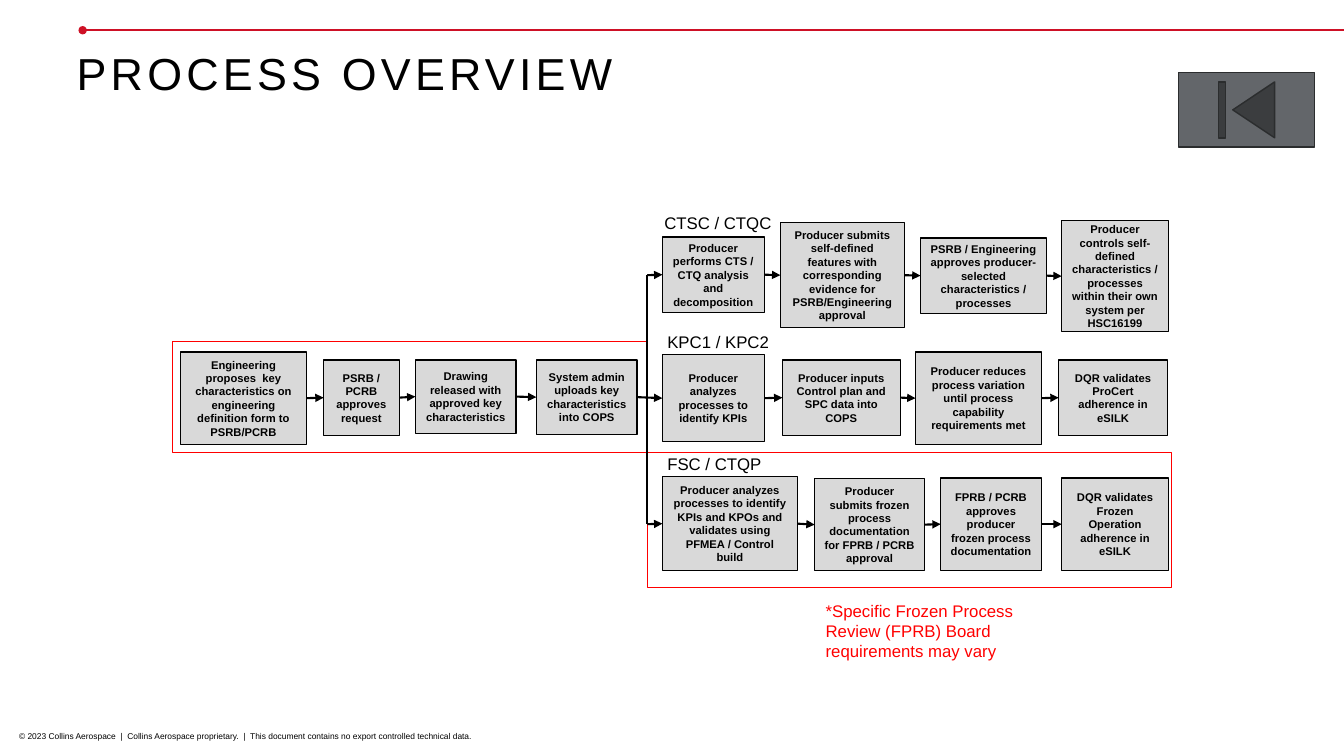
from lxml import etree
from pptx import Presentation
from pptx import util as u
from pptx.dml.color import RGBColor
from pptx.enum import shapes as shp, text as txt
from pptx.oxml.ns import qn


def paint(color_format, value):
    color_format.rgb = RGBColor.from_string(value)


def draw_line(start, end, color="000000", head=None, tail=None):
    line = slide.shapes.add_connector(
        shp.MSO_CONNECTOR.STRAIGHT, *[u.Inches(v) for v in (*start, *end)])
    paint(line.line.color, color)
    line.line.width = u.Pt(1.5)
    outline = line.line._get_or_add_ln()
    for tag, kind in (("a:headEnd", head), ("a:tailEnd", tail)):
        if kind:
            etree.SubElement(outline, qn(tag)).set("type", kind)
    etree.SubElement(line._element.spPr, qn("a:effectLst"))
    return line


prs = Presentation()
prs.slide_width, prs.slide_height = u.Inches(13.33), u.Inches(7.5)
slide = prs.slides.add_slide(prs.slide_layouts[5])

draw_line((0.82, 0.3), (13.33, 0.3), "CE1126", head="oval")

title = slide.shapes.title
title.left, title.top = u.Inches(0.76), u.Inches(0.56)
title.width, title.height = u.Inches(11.82), u.Inches(0.74)
frame = title.text_frame
frame.text = "PROCESS OVERVIEW"
frame.auto_size = txt.MSO_AUTO_SIZE.NONE
frame.vertical_anchor = txt.MSO_ANCHOR.TOP
frame.margin_left = frame.margin_right = frame.margin_top = frame.margin_bottom = 0
heading = frame.paragraphs[0]
heading.alignment = txt.PP_ALIGN.LEFT
heading.line_spacing = 0.8
heading.font.name, heading.font.size = "Arial", u.Pt(32)
paint(heading.font.color, "000000")
heading.runs[0].font._element.set("spc", "300")

for area in ((1.71, 3.39, 4.7, 1.1), (6.42, 4.49, 5.2, 1.34)):
    scope = slide.shapes.add_shape(shp.MSO_SHAPE.RECTANGLE, *[u.Inches(v) for v in area])
    scope.shadow.inherit = False
    scope.fill.background()
    paint(scope.line.color, "FF0000")
    scope.line.width = u.Pt(1)

flows = {
    "ctsc": [
        (6.57, 2.35, 1.01, 0.75, "Producer performs CTS / CTQ analysis and decomposition"),
        (7.74, 2.21, 1.23, 1.04, "Producer submits self-defined features with corresponding "
                                 "evidence for PSRB/Engineering approval"),
        (9.13, 2.36, 1.25, 0.75, "PSRB / Engineering approves producer-selected "
                                 "characteristics / processes"),
        (10.53, 2.19, 1.06, 1.1, "Producer controls self-defined characteristics / processes "
                                 "within their own system per HSC16199"),
    ],
    "kpc": [
        (1.79, 3.49, 1.25, 0.92, "Engineering proposes  key characteristics on engineering "
                                 "definition form to PSRB/PCRB"),
        (3.21, 3.57, 0.75, 0.75, "PSRB / PCRB approves request"),
        (4.12, 3.57, 1, 0.73, "Drawing released with approved key characteristics"),
        (5.32, 3.57, 1, 0.74, "System admin uploads key characteristics into COPS"),
        (6.57, 3.52, 1.01, 0.86, "Producer analyzes processes to identify KPIs"),
        (7.76, 3.57, 1.17, 0.75, "Producer inputs Control plan and SPC data into COPS"),
        (9.08, 3.49, 1.25, 0.92, "Producer reduces process variation until process "
                                 "capability requirements met"),
        (10.5, 3.57, 1.08, 0.75, "DQR validates ProCert adherence in eSILK"),
    ],
    "fsc": [
        (6.57, 4.73, 1.34, 0.93, "Producer analyzes processes to identify KPIs and KPOs and "
                                 "validates using PFMEA / Control build"),
        (8.08, 4.75, 1.09, 0.91, "Producer submits frozen process documentation for "
                                 "FPRB / PCRB approval"),
        (9.33, 4.74, 1, 0.92, "FPRB / PCRB approves producer frozen process documentation"),
        (10.53, 4.74, 1.06, 0.92, "DQR validates Frozen Operation adherence in eSILK"),
    ],
}
branch_x = 6.42
branch_y = {"ctsc": 2.73, "fsc": 5.2}
draw_line((branch_x, branch_y["ctsc"]), (branch_x, branch_y["fsc"]))

for flow, steps in flows.items():
    previous = None
    for x, y, width, height, wording in steps:
        step = slide.shapes.add_shape(
            shp.MSO_SHAPE.RECTANGLE, *[u.Inches(v) for v in (x, y, width, height)])
        step.shadow.inherit = False
        step.fill.solid()
        paint(step.fill.fore_color, "D9D9D9")
        paint(step.line.color, "000000")
        step.line.width = u.Pt(1)
        step.text_frame.text = wording
        step.text_frame.word_wrap = True
        step.text_frame.vertical_anchor = txt.MSO_ANCHOR.MIDDLE
        label = step.text_frame.paragraphs[0]
        label.alignment = txt.PP_ALIGN.CENTER
        label.font.name, label.font.size, label.font.bold = "Arial", u.Pt(8), True
        paint(label.font.color, "000000")

        if previous or flow in branch_y:
            level = y + height / 2
            start = (branch_x, branch_y.get(flow, level))
            arrow = draw_line(start, (x, level), tail="triangle")
            if previous:
                arrow.begin_connect(previous, 3)
            arrow.end_connect(step, 1)
        previous = step

captions = [
    (6.49, 2.06, 1.34, 0.3, "CTSC / CTQC", 12, "000000"),
    (6.52, 3.24, 1.31, 0.3, "KPC1 / KPC2", 12, "000000"),
    (6.52, 4.45, 1.23, 0.3, "FSC / CTQP", 12, "000000"),
    (8.09, 5.91, 2.62, 0.71, "*Specific Frozen Process Review (FPRB) Board "
                             "requirements may vary", 12, "FF0000"),
    (0.09, 7.2, 11.02, 0.3, "© 2023 Collins Aerospace  |  Collins Aerospace proprietary.  |  "
                            "This document contains no export controlled technical data.",
     6, "000000"),
]
for *area, wording, size, color in captions:
    caption = slide.shapes.add_textbox(*[u.Inches(v) for v in area])
    caption.text_frame.word_wrap = True
    caption.text_frame.text = wording
    line = caption.text_frame.paragraphs[0]
    line.font.name, line.font.size = "Arial", u.Pt(size)
    paint(line.font.color, color)

back_to_start = slide.shapes.add_shape(
    shp.MSO_SHAPE.ACTION_BUTTON_BEGINNING, u.Inches(11.69), u.Inches(0.72),
    u.Inches(1.35), u.Inches(0.74))
back_to_start.shadow.inherit = False
back_to_start.fill.solid()
paint(back_to_start.fill.fore_color, "63666A")
paint(back_to_start.line.color, "2B2D2E")
back_to_start.line.width = u.Pt(1)

prs.save("out.pptx")
